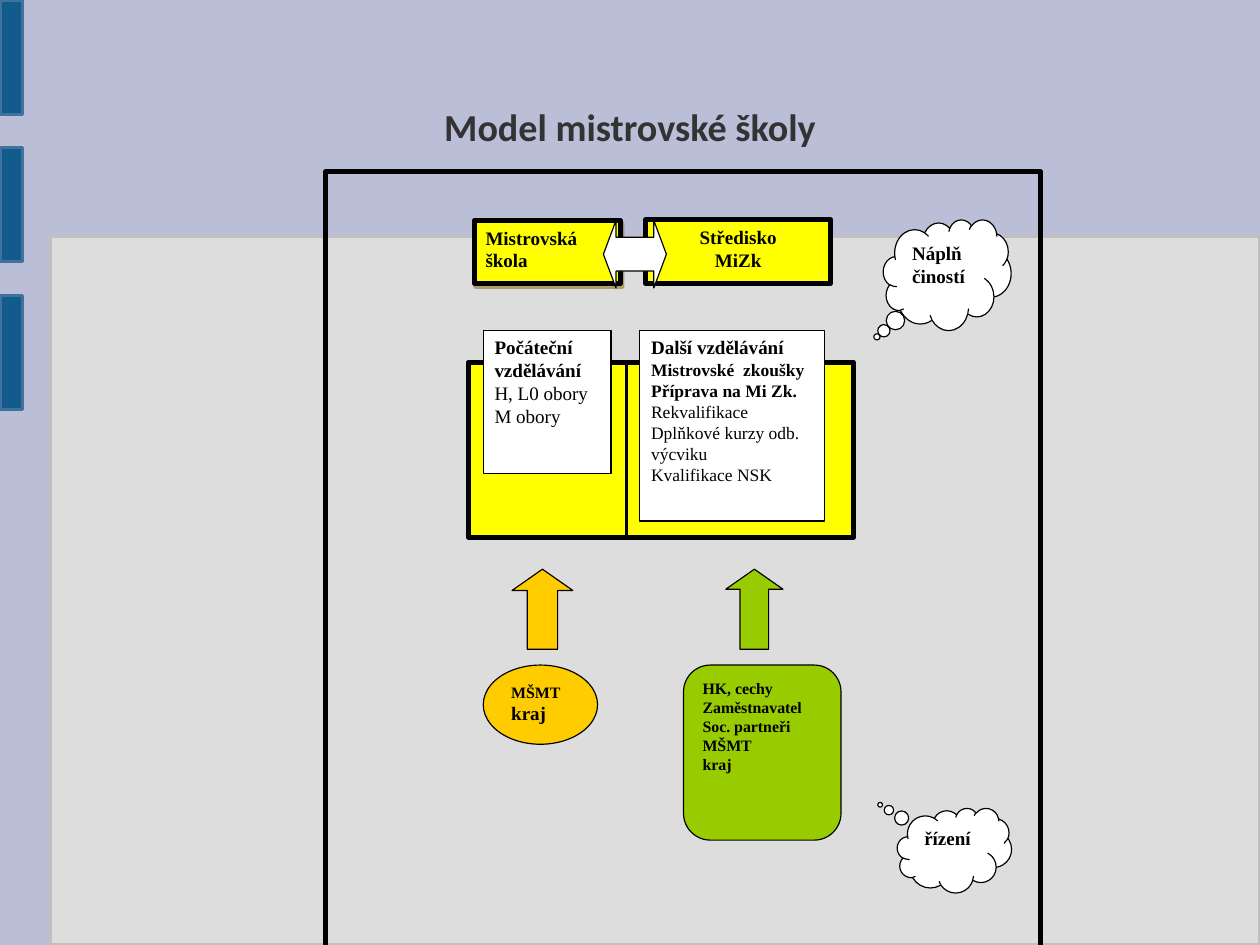
from lxml.etree import SubElement
from pptx import Presentation
from pptx.dml.color import RGBColor
from pptx.enum.shapes import MSO_CONNECTOR, MSO_SHAPE
from pptx.enum.text import MSO_ANCHOR, PP_ALIGN
from pptx.oxml.ns import qn
from pptx.util import Cm, Pt

YELLOW, ORANGE, GREEN = "FFFF00", "FFCC00", "99CC00"
WHITE, BLACK = "FFFFFF", "000000"


def color(hex_value):
    return RGBColor.from_string(hex_value)


def add_box(kind, left, top, width, height, fill, line=BLACK, weight=0.75,
            adjust=(), lines=(), align=PP_ALIGN.LEFT):
    """Add a shape; each text line is (text, size, bold)."""
    box = slide.shapes.add_shape(kind, Cm(left), Cm(top), Cm(width), Cm(height))
    box.shadow.inherit = False
    if fill:
        box.fill.solid()
        box.fill.fore_color.rgb = color(fill)
    else:
        box.fill.background()
    box.line.color.rgb = color(line)
    box.line.width = Pt(weight)
    for index, value in enumerate(adjust):
        box.adjustments[index] = value
    frame = box.text_frame
    frame.vertical_anchor = MSO_ANCHOR.TOP
    for index, (text, size, bold) in enumerate(lines):
        paragraph = frame.add_paragraph() if index else frame.paragraphs[0]
        paragraph.alignment = align
        run = paragraph.add_run()
        run.text = text
        run.font.name = "Times New Roman"
        run.font.size = Pt(size)
        run.font.bold = bold
        run.font.color.rgb = color(BLACK)
    return box


prs = Presentation()
prs.slide_width, prs.slide_height = Cm(28), Cm(21)
slide = prs.slides.add_slide(prs.slide_layouts[5])
slide.background.fill.solid()
slide.background.fill.fore_color.rgb = color("BABED6")

# Grey panel and the tabs on the left edge
add_box(MSO_SHAPE.RECTANGLE, 1.12, 5.26, 26.88, 15.74, "DDDDDD", "C0C0C0", 2)
for row in range(3):
    add_box(MSO_SHAPE.RECTANGLE, 0, 3.28 * row, 0.51, 2.54, "125C8D", "41719C", 2)

# Title
title = slide.shapes.title
title.left, title.top, title.width, title.height = Cm(2.05), Cm(0.58), Cm(23.9), Cm(4.47)
heading = title.text_frame
heading.margin_left = heading.margin_right = heading.margin_top = heading.margin_bottom = 0
heading.vertical_anchor = MSO_ANCHOR.MIDDLE
heading.paragraphs[0].alignment = PP_ALIGN.CENTER
heading_run = heading.paragraphs[0].add_run()
heading_run.text = "Model mistrovské školy"
heading_run.font.name = "Calibri"
heading_run.font.size = Pt(24)
heading_run.font.bold = True
heading_run.font.color.rgb = color("333333")

# Outer frame and the yellow field with its divider
add_box(MSO_SHAPE.RECTANGLE, 7.24, 3.81, 15.88, 17.68, None, weight=3)
add_box(MSO_SHAPE.RECTANGLE, 10.41, 8.05, 8.56, 3.89, YELLOW, weight=3)
divider = slide.shapes.add_connector(
    MSO_CONNECTOR.STRAIGHT, Cm(13.92), Cm(8.05), Cm(13.92), Cm(11.94))
divider.line.color.rgb = color(BLACK)
divider.line.width = Pt(2.25)
SubElement(divider._element.spPr, qn("a:effectLst"))

# School and exam centre, linked by a double arrow
add_box(MSO_SHAPE.RECTANGLE, 14.35, 4.88, 4.11, 1.42, YELLOW, weight=3,
        lines=[("Středisko", 12, True), ("MiZk", 12, True)], align=PP_ALIGN.CENTER)
school = add_box(MSO_SHAPE.RECTANGLE, 10.54, 4.9, 3.25, 1.4, YELLOW, weight=3,
                 lines=[("Mistrovská", 12, True), ("škola", 12, True)])
effects = school._element.spPr.find(qn("a:effectLst"))
shadow = SubElement(effects, qn("a:outerShdw"), blurRad="0", dist=str(Pt(2.2)),
                    dir=str(63 * 60000), algn="ctr", rotWithShape="0")
shadow_color = SubElement(shadow, qn("a:srgbClr"), val="7F5F00")
SubElement(shadow_color, qn("a:alpha"), val="50000")
add_box(MSO_SHAPE.LEFT_RIGHT_ARROW, 13.41, 4.9, 1.4, 1.5, WHITE, adjust=(0.5, 0.2))

# Kinds of education
add_box(MSO_SHAPE.RECTANGLE, 10.74, 7.34, 2.84, 3.18, WHITE, lines=[
    ("Počáteční", 12, True), ("vzdělávání", 12, True),
    ("H, L0 obory", 12, False), ("M obory", 12, False)])
add_box(MSO_SHAPE.RECTANGLE, 14.22, 7.34, 4.11, 4.24, WHITE, lines=[
    ("Další vzdělávání", 12, True), ("Mistrovské  zkoušky", 11, True),
    ("Příprava na Mi Zk.", 11, True), ("Rekvalifikace", 11, False),
    ("Dplňkové kurzy odb. výcviku", 11, False), ("Kvalifikace NSK", 11, False)])

# Governing bodies and their arrows
add_box(MSO_SHAPE.OVAL, 10.74, 14.78, 2.54, 1.76, ORANGE,
        lines=[("MŠMT", 10, True), ("kraj", 12, True)])
partners = ["HK, cechy", "Zaměstnavatel", "Soc. partneři", "MŠMT", "kraj"]
add_box(MSO_SHAPE.ROUNDED_RECTANGLE, 15.19, 14.78, 3.5, 3.89, GREEN, adjust=(0.17,),
        lines=[(partner, 10, True) for partner in partners])
for left, width, fill in [(11.38, 1.35, ORANGE), (16.13, 1.27, GREEN)]:
    add_box(MSO_SHAPE.UP_ARROW, left, 12.65, width, 1.78, fill, adjust=(0.5, 0.35))

# Thought clouds
add_box(MSO_SHAPE.CLOUD_CALLOUT, 19.63, 4.88, 2.84, 2.46, WHITE, adjust=(-0.55, 0.56),
        lines=[("Náplň", 12, True), ("čiností", 12, True)])
add_box(MSO_SHAPE.CLOUD_CALLOUT, 19.94, 17.96, 2.54, 1.88, WHITE, adjust=(-0.65, -0.54),
        lines=[("řízení", 12, True)])

prs.save("out.pptx")
